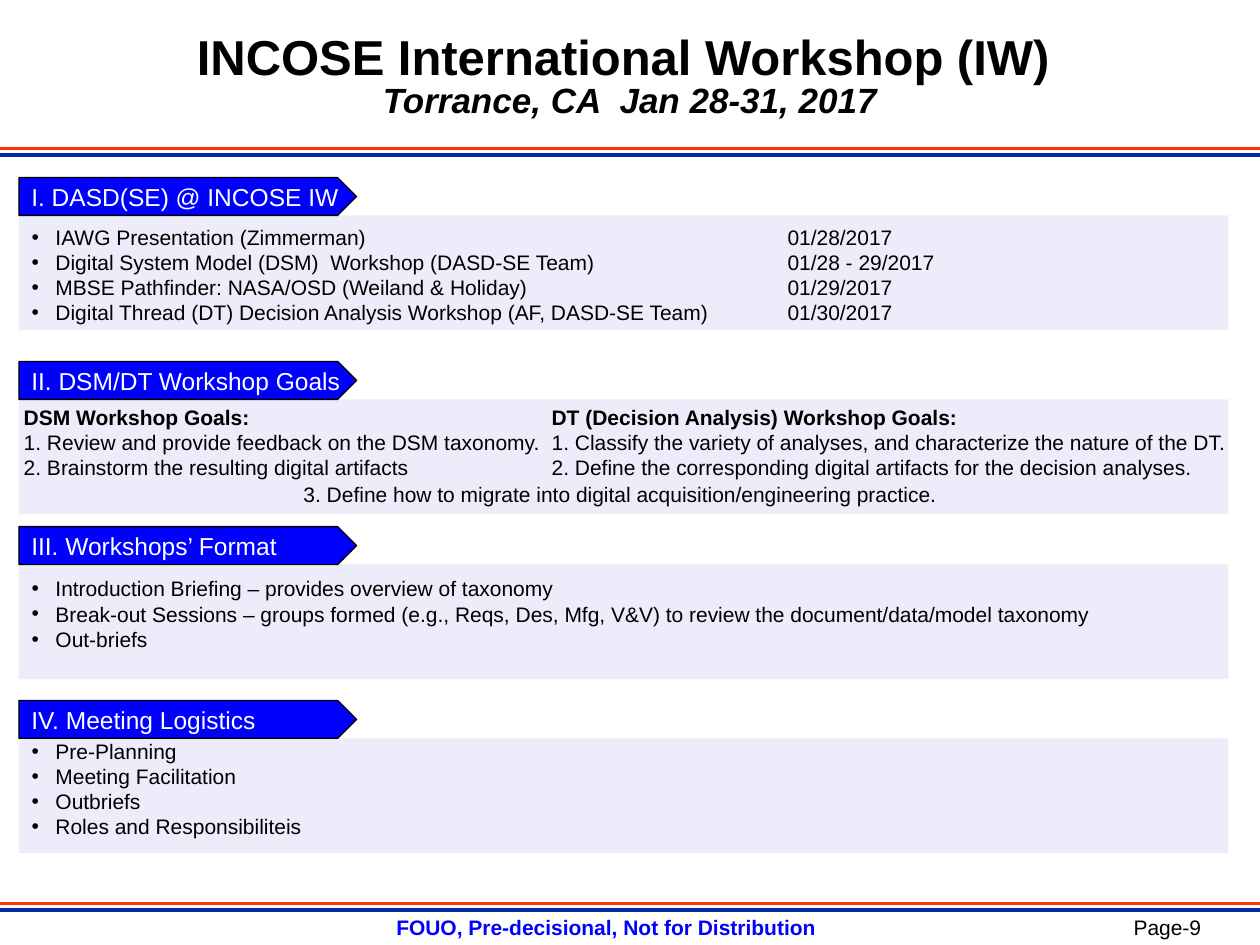
from dataclasses import dataclass

from lxml import etree
from pptx import Presentation
from pptx.dml.color import RGBColor
from pptx.enum.shapes import MSO_CONNECTOR, MSO_SHAPE
from pptx.enum.text import MSO_ANCHOR, MSO_AUTO_SIZE, PP_ALIGN
from pptx.oxml.ns import qn
from pptx.util import Inches, Pt


@dataclass(frozen=True)
class Theme:
    font: str = "Arial"
    black: RGBColor = RGBColor(0, 0, 0)
    white: RGBColor = RGBColor(255, 255, 255)
    blue: RGBColor = RGBColor(0, 0, 255)
    panel: RGBColor = RGBColor(0xEC, 0xEC, 0xFA)
    navy_rule: RGBColor = RGBColor(0x03, 0x2A, 0xA1)
    orange_rule: RGBColor = RGBColor(0xFF, 0x33, 0)
    title: int = 28
    subtitle: int = 20
    heading: int = 14
    body: int = 12


@dataclass(frozen=True)
class Section:
    heading: str
    top: float
    list_top: float = 0
    items: tuple[str, ...] = ()


@dataclass(frozen=True)
class Note:
    left: float
    top: float
    width: float
    height: float
    lines: tuple[str, ...]
    bold_first: bool = False
    color: RGBColor = Theme.black
    align: PP_ALIGN = PP_ALIGN.LEFT


THEME = Theme()
LEFT, PANEL_WIDTH, PANEL_HEIGHT = 0.15, 9.6, 0.91
BANNER_WIDTH, BANNER_HEIGHT = 2.68, 0.3
INDENT, DATE_TAB = 0.19, 6.0

SECTIONS = (
    Section("I. DASD(SE) @ INCOSE IW", 1.41, 1.73, (
        "IAWG Presentation (Zimmerman)\t01/28/2017",
        "Digital System Model (DSM)  Workshop (DASD-SE Team)\t01/28 - 29/2017",
        "MBSE Pathfinder: NASA/OSD (Weiland & Holiday)\t01/29/2017",
        "Digital Thread (DT) Decision Analysis Workshop (AF, DASD-SE Team)\t01/30/2017",
    )),
    Section("II. DSM/DT Workshop Goals", 2.87),
    Section("III. Workshops’ Format", 4.18, 4.52, (
        "Introduction Briefing – provides overview of taxonomy",
        "Break-out Sessions – groups formed (e.g., Reqs, Des, Mfg, V&V) "
        "to review the document/data/model taxonomy",
        "Out-briefs",
    )),
    Section("IV. Meeting Logistics", 5.56, 5.81, (
        "Pre-Planning",
        "Meeting Facilitation",
        "Outbriefs",
        "Roles and Responsibiliteis",
    )),
)

NOTES = (
    Note(0.09, 3.16, 4.43, 0.71, (
        "DSM Workshop Goals:",
        "1. Review and provide feedback on the DSM taxonomy.",
        "2. Brainstorm the resulting digital artifacts",
    ), bold_first=True),
    Note(4.28, 3.16, 5.6, 0.71, (
        "DT (Decision Analysis) Workshop Goals:",
        "1. Classify the variety of analyses, and characterize the nature of the DT.",
        "2. Define the corresponding digital artifacts for the decision analyses.",
    ), bold_first=True),
    Note(2.31, 3.77, 5.45, 0.3, (
        "3. Define how to migrate into digital acquisition/engineering practice.",
    )),
    Note(0.93, 7.21, 7.81, 0.3, ("FOUO, Pre-decisional, Not for Distribution ",),
         bold_first=True, color=THEME.blue, align=PP_ALIGN.CENTER),
    Note(8.74, 7.21, 1.05, 0.3, ("Page-9",), align=PP_ALIGN.CENTER),
)


def place(shape, left: float, top: float, width: float, height: float) -> None:
    shape.left, shape.top = Inches(left), Inches(top)
    shape.width, shape.height = Inches(width), Inches(height)


def add_run(paragraph, text: str, size: int, color: RGBColor = THEME.black,
            bold: bool = False, italic: bool = False) -> None:
    run = paragraph.add_run()
    run.text = text
    font = run.font
    font.name, font.size, font.bold, font.italic = THEME.font, Pt(size), bold, italic
    font.color.rgb = color


def paragraphs(frame, lines: tuple[str, ...]):
    """Yield each line with its paragraph, starting with the existing one."""
    for number, line in enumerate(lines):
        yield line, frame.add_paragraph() if number else frame.paragraphs[0]


def add_rule(slide, y: float, color: RGBColor, weight: float) -> None:
    rule = slide.shapes.add_connector(
        MSO_CONNECTOR.STRAIGHT, 0, Inches(y), Inches(10), Inches(y))
    rule.line.color.rgb = color
    rule.line.width = Pt(weight)
    etree.SubElement(rule.element.spPr, qn("a:effectLst"))


def add_block(slide, kind: MSO_SHAPE, top: float, width: float, height: float,
              color: RGBColor):
    block = slide.shapes.add_shape(
        kind, Inches(LEFT), Inches(top), Inches(width), Inches(height))
    block.shadow.inherit = False
    block.fill.solid()
    block.fill.fore_color.rgb = color
    block.line.fill.background()
    return block


def add_section(slide, section: Section) -> None:
    add_block(slide, MSO_SHAPE.RECTANGLE, section.top + BANNER_HEIGHT,
              PANEL_WIDTH, PANEL_HEIGHT, THEME.panel)
    banner = add_block(slide, MSO_SHAPE.PENTAGON, section.top,
                       BANNER_WIDTH, BANNER_HEIGHT, THEME.blue)
    banner.line.color.rgb = THEME.black
    banner.line.width = Pt(0.75)
    frame = banner.text_frame
    frame.word_wrap = False
    frame.margin_right = frame.margin_top = frame.margin_bottom = 0
    frame.vertical_anchor = MSO_ANCHOR.MIDDLE
    frame.paragraphs[0].alignment = PP_ALIGN.LEFT
    add_run(frame.paragraphs[0], section.heading, THEME.heading, THEME.white)


def add_bullet(paragraph, with_tab: bool) -> None:
    props = paragraph._p.get_or_add_pPr()
    props.set("marL", str(Inches(INDENT)))
    props.set("indent", str(-Inches(INDENT)))
    etree.SubElement(props, qn("a:buFont"), typeface=THEME.font)
    etree.SubElement(props, qn("a:buChar"), char="•")
    if with_tab:
        tabs = etree.SubElement(props, qn("a:tabLst"))
        etree.SubElement(tabs, qn("a:tab"), pos=str(Inches(DATE_TAB)), algn="l")


def fill_list(body, section: Section) -> None:
    place(body, LEFT, section.list_top, PANEL_WIDTH, PANEL_HEIGHT)
    body.element.getparent().append(body.element)  # in front of its panel
    frame = body.text_frame
    frame.auto_size = MSO_AUTO_SIZE.NONE
    frame.vertical_anchor = MSO_ANCHOR.TOP
    for item, paragraph in paragraphs(frame, section.items):
        add_bullet(paragraph, "\t" in item)
        paragraph.space_before = Pt(0)
        add_run(paragraph, item, THEME.body)


def add_note(slide, note: Note) -> None:
    box = slide.shapes.add_textbox(Inches(note.left), Inches(note.top),
                                   Inches(note.width), Inches(note.height))
    box.text_frame.word_wrap = False
    for number, (line, paragraph) in enumerate(paragraphs(box.text_frame, note.lines)):
        paragraph.alignment = note.align
        add_run(paragraph, line, THEME.body, note.color,
                bold=note.bold_first and number == 0)


def fill_title(title) -> None:
    place(title, 1.17, 0.11, 7.66, 1.02)
    title.text_frame.auto_size = MSO_AUTO_SIZE.NONE
    title.text_frame.vertical_anchor = MSO_ANCHOR.MIDDLE
    paragraph = title.text_frame.paragraphs[0]
    paragraph.alignment = PP_ALIGN.CENTER
    paragraph.line_spacing = 0.85
    add_run(paragraph, "INCOSE International Workshop (IW) ", THEME.title, bold=True)
    paragraph.add_line_break()
    add_run(paragraph, "Torrance, CA  Jan 28-31, 2017", THEME.subtitle,
            bold=True, italic=True)


def main() -> None:
    deck = Presentation()
    deck.slide_width, deck.slide_height = Inches(10), Inches(7.5)
    slide = deck.slides.add_slide(deck.slide_layouts.get_by_name("Comparison"))
    title, *bodies = list(slide.placeholders)

    # Header and footer rules
    for y in (1.23, 7.22):
        add_rule(slide, y, THEME.navy_rule, 2.25)
        add_rule(slide, y - 0.05, THEME.orange_rule, 2)

    # Title, sections and their lists
    fill_title(title)
    for section in SECTIONS:
        add_section(slide, section)
        if section.items:
            fill_list(bodies.pop(0), section)
    for unused in bodies:
        unused.element.getparent().remove(unused.element)

    # Workshop goals and footer
    for note in NOTES:
        add_note(slide, note)
    deck.save("out.pptx")


if __name__ == "__main__":
    main()
